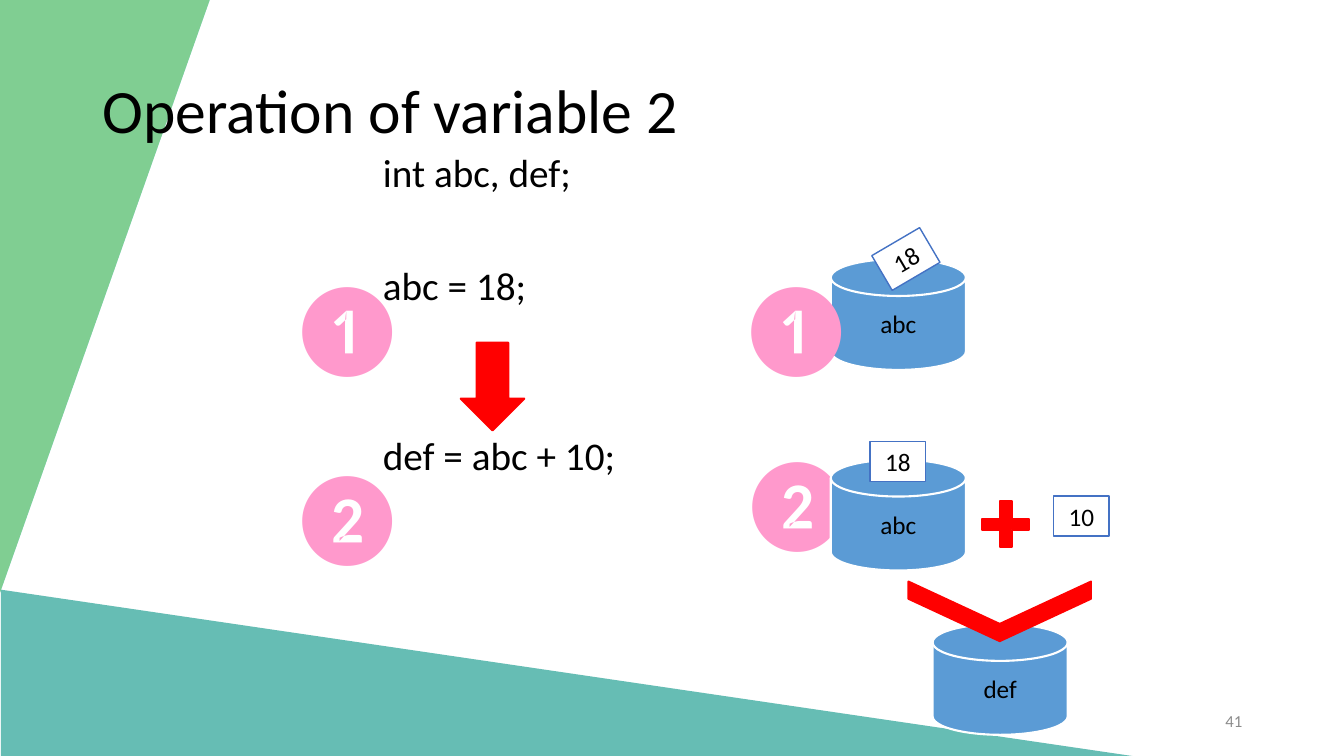
import pptx
import pptx.dml.color
import pptx.enum.shapes
import pptx.enum.text
import pptx.oxml.ns
import pptx.util
from lxml import etree

Inches, Pt = pptx.util.Inches, pptx.util.Pt
SHAPE = pptx.enum.shapes.MSO_SHAPE
ALIGN = pptx.enum.text.PP_ALIGN
ANCHOR = pptx.enum.text.MSO_ANCHOR

COLORS = {
    "text": "000000", "white": "FFFFFF", "number": "8C8C8C",
    "sky": "00ADEF", "lime": "92D050", "teal": "009183",
    "disk": "5B9BD5", "card_edge": "4472C4",
    "red": "FF0000", "pink": "FF99CC",
}
FONT = "Calibri"
DISK = (1.34, 1.1)
CARD = (0.55, 0.4)
BADGE = (1.02, 1.21)


def rgb(name):
    return pptx.dml.color.RGBColor.from_string(COLORS[name])


def write(frame, text, size=18, color="text", align=ALIGN.LEFT,
          anchor=ANCHOR.TOP, wrap=True, line_spacing=None, gaps=()):
    """Fill a text frame, one paragraph a line; gaps are points before each."""
    frame.word_wrap = wrap
    frame.vertical_anchor = anchor
    for i, line in enumerate(text.split("\n")):
        paragraph = frame.paragraphs[0] if i == 0 else frame.add_paragraph()
        paragraph.alignment = align
        if line_spacing:
            paragraph.line_spacing = line_spacing
        if gaps:
            paragraph.space_before = Pt(gaps[i])
        run = paragraph.add_run()
        run.text = line
        run.font.name = FONT
        run.font.size = Pt(size)
        run.font.color.rgb = rgb(color)


def add_text(slide, box, text, **style):
    label = slide.shapes.add_textbox(*map(Inches, box))
    write(label.text_frame, text, **style)


def add_figure(slide, kind, box, fill, edge=None, edge_width=1.5,
               rotation=0, adjust=None, alpha=None):
    figure = slide.shapes.add_shape(kind, *map(Inches, box))
    figure.shadow.inherit = False
    figure.rotation = rotation
    figure.fill.solid()
    figure.fill.fore_color.rgb = rgb(fill)
    if edge:
        figure.line.color.rgb = rgb(edge)
        figure.line.width = Pt(edge_width)
    else:
        figure.line.fill.background()
    if adjust is not None:
        figure.adjustments[0] = adjust
    if alpha is not None:
        qn = pptx.oxml.ns.qn
        color = figure._element.spPr.find(qn("a:solidFill")).find(qn("a:srgbClr"))
        etree.SubElement(color, qn("a:alpha")).set("val", str(alpha * 1000))
    return figure


def add_disk(slide, left, top, name):
    disk = add_figure(slide, SHAPE.FLOWCHART_MAGNETIC_DISK,
                      (left, top, *DISK), "disk", "white")
    write(disk.text_frame, name, align=ALIGN.CENTER, anchor=ANCHOR.MIDDLE)


def add_card(slide, left, top, value, rotation=0):
    card = add_figure(slide, SHAPE.RECTANGLE, (left, top, *CARD),
                      "white", "card_edge", 1, rotation)
    write(card.text_frame, value, align=ALIGN.CENTER, wrap=False)


def add_badge(slide, left, top, symbol):
    add_text(slide, (left, top, *BADGE), symbol, size=66, color="pink", wrap=False)


def backdrop(slide, box):
    left, top, width, height = box
    # Left wedge: two tinted layers
    for tint in ("sky", "lime"):
        add_figure(slide, SHAPE.RIGHT_TRIANGLE, (left - 1.9, top + 1.9, 5.88, 2.08),
                   tint, rotation=90, alpha=60)
    # Bottom wedge
    add_figure(slide, SHAPE.RIGHT_TRIANGLE,
               (left + 0.01, top + height - 1.65, 11.22, 1.65), "teal", alpha=60)


def heading(slide, box):
    add_text(slide, box, "Operation of variable 2", size=44,
             anchor=ANCHOR.MIDDLE, line_spacing=0.9)


def code_steps(slide, box):
    left, top, width, height = box
    add_text(slide, box, "int abc, def;\nabc = 18;\ndef = abc + 10;",
             size=28, line_spacing=0.9, gaps=(0, 50.8, 91.5))
    add_figure(slide, SHAPE.DOWN_ARROW, (left + 0.87, top + 1.93, 0.63, 0.87),
               "red", "red")
    add_badge(slide, left - 0.96, top + 1.15, "❶")
    add_badge(slide, left - 0.96, top + 3.03, "❷")


def memory_steps(slide, box):
    left, top, width, height = box
    disk_left = left + 1.04
    # Step 1: 18 goes into abc
    add_disk(slide, disk_left, top + 0.2, "abc")
    add_card(slide, left + 1.51, top, "18", rotation=329.6)
    add_badge(slide, left, top + 0.25, "❶")
    # Step 2: abc + 10
    add_badge(slide, left + 0.01, top + 1.99, "❷")
    add_disk(slide, disk_left, top + 2.19, "abc")
    add_card(slide, left + 1.43, top + 2.01, "18")
    add_figure(slide, SHAPE.CROSS, (left + 2.54, top + 2.6, 0.47, 0.46),
               "red", "red", adjust=0.382)
    add_card(slide, left + 3.25, top + 2.55, "10")
    # Result goes into def
    add_disk(slide, left + 2.05, top + 3.82, "def")
    add_figure(slide, SHAPE.CHEVRON, (left + 2.42, top + 2.79, 0.59, 1.81),
               "red", "red", rotation=90, adjust=0.712)


def page_number(slide, box):
    add_text(slide, box, "41", size=12, color="number",
             align=ALIGN.RIGHT, anchor=ANCHOR.MIDDLE)


def main():
    deck = pptx.Presentation()
    deck.slide_width, deck.slide_height = Inches(13.33), Inches(7.5)
    slide = deck.slides.add_slide(deck.slide_layouts[6])
    backdrop(slide, (0, 0, 13.33, 7.5))
    heading(slide, (0.92, 0.4, 11.5, 1.45))
    code_steps(slide, (3.7, 1.47, 3.46, 6.22))
    memory_steps(slide, (7.2, 2.37, 3.8, 4.92))
    page_number(slide, (9.42, 6.95, 3, 0.4))
    deck.save("out.pptx")


if __name__ == "__main__":
    main()
